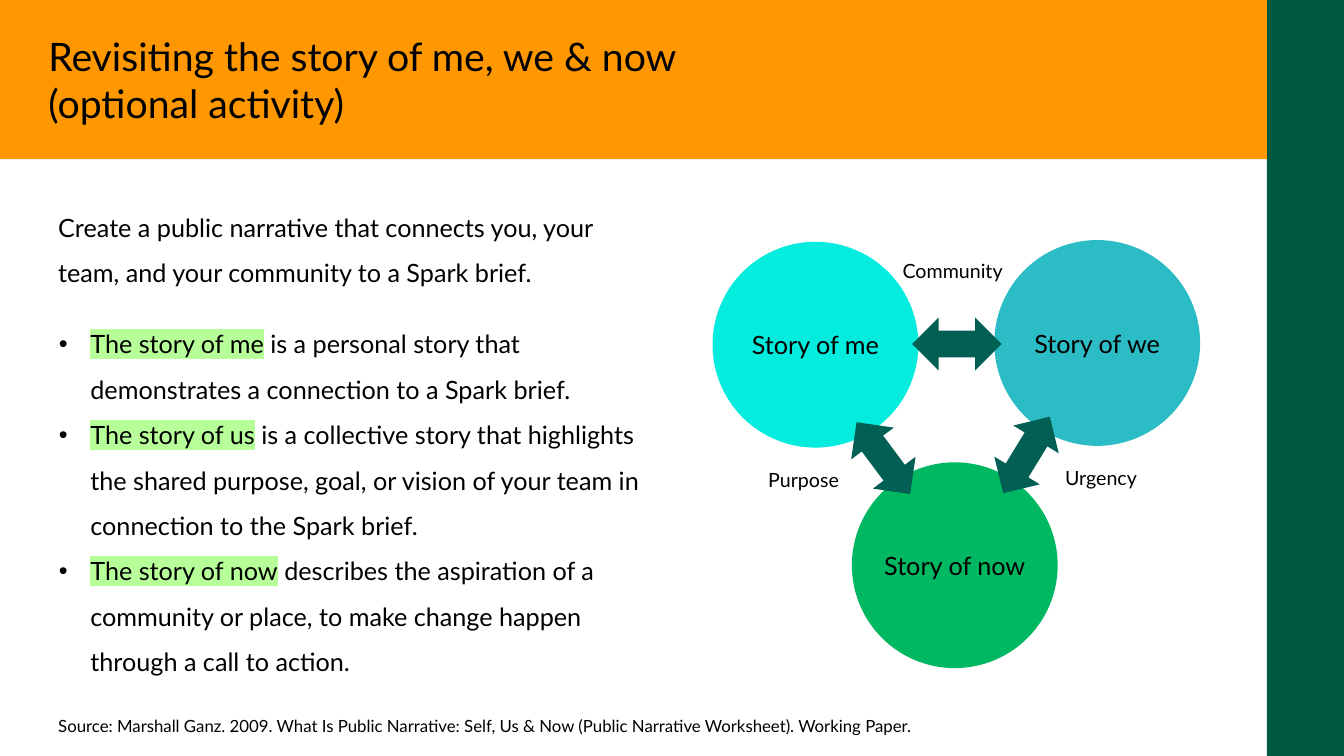
from dataclasses import dataclass

from lxml.etree import SubElement
from pptx import Presentation
from pptx.dml.color import RGBColor
from pptx.enum.shapes import MSO_SHAPE
from pptx.enum.text import MSO_ANCHOR, PP_ALIGN
from pptx.oxml.ns import qn
from pptx.util import Pt


@dataclass
class Theme:
    font: str = "Lato"
    ink: str = "000000"
    band: str = "FF9700"
    bar: str = "005840"
    mark: str = "B6FF99"
    me: str = "03ECDD"
    we: str = "2BBCC5"
    now: str = "00B862"
    arrow: str = "025F54"
    title: int = 28
    body: int = 18
    label: int = 14
    note: int = 12


theme = Theme()
deck = Presentation()
deck.slide_width, deck.slide_height = Pt(960), Pt(540)
slide = deck.slides.add_slide(deck.slide_layouts[6])


def write(frame, paras, size=theme.body, align=PP_ALIGN.LEFT, lead=None,
          bullet=False, wrap=True, anchor=MSO_ANCHOR.TOP):
    """Each paragraph is a list of (words, highlight colour or None)."""
    frame.word_wrap = wrap
    frame.vertical_anchor = anchor
    for i, runs in enumerate(paras):
        para = frame.paragraphs[0] if i == 0 else frame.add_paragraph()
        para.alignment = align
        if lead:
            para.line_spacing = lead
        if bullet:
            props = para._p.get_or_add_pPr()
            props.set("marL", str(Pt(22.5)))
            props.set("indent", str(-Pt(22.5)))
            SubElement(props, qn("a:buFont"), typeface="Arial")
            SubElement(props, qn("a:buChar"), char="•")
        for words, mark in runs:
            run = para.add_run()
            run.text = words
            run.font.size = Pt(size)
            run.font.color.rgb = RGBColor.from_string(theme.ink)
            if mark:
                light = SubElement(run._r.get_or_add_rPr(), qn("a:highlight"))
                SubElement(light, qn("a:srgbClr"), val=mark)
            run.font.name = theme.font


def draw(kind, left, top, width, height, fill, turn=0):
    shape = slide.shapes.add_shape(kind, Pt(left), Pt(top), Pt(width), Pt(height))
    shape.shadow.inherit = False
    shape.fill.solid()
    shape.fill.fore_color.rgb = RGBColor.from_string(fill)
    shape.line.fill.background()
    shape.rotation = turn
    return shape


# Side bar and title band
draw(MSO_SHAPE.RECTANGLE, 905, 0, 55, 540, theme.bar)
draw(MSO_SHAPE.RECTANGLE, 0, 0, 905, 113.75, theme.band)

# Title
head = slide.shapes.add_textbox(Pt(34.5), Pt(23), Pt(816), Pt(68)).text_frame
head.margin_left = head.margin_top = head.margin_right = head.margin_bottom = 0
write(head, [[("Revisiting the story of me, we & now", None)],
             [("(optional activity)", None)]], size=theme.title)

# Intro, bullets and source
intro = "Create a public narrative that connects you, your team, and your community to a Spark brief."
tales = [
    ("The story of me", " is a personal story that demonstrates a connection to a Spark brief."),
    ("The story of us", " is a collective story that highlights the shared purpose, goal, or vision "
                        "of your team in connection to the Spark brief."),
    ("The story of now", " describes the aspiration of a community or place, to make change happen "
                         "through a call to action."),
]
source = ("Source: Marshall Ganz. 2009. What Is Public Narrative: Self, Us & Now "
          "(Public Narrative Worksheet). Working Paper.")
points = [[(name, theme.mark), (rest, None)] for name, rest in tales]
for left, top, width, height, paras, style in [
    (34.5, 137, 440.5, 70, [[(intro, None)]], dict(lead=1.5)),
    (35, 220.5, 440.5, 266, points, dict(lead=1.5, bullet=True)),
    (34.5, 507.5, 790, 22, [[(source, None)]], dict(size=theme.note)),
]:
    box = slide.shapes.add_textbox(Pt(left), Pt(top), Pt(width), Pt(height))
    write(box.text_frame, paras, **style)

# Story circles
for name, left, top, fill in [
    ("Story of me", 509, 172.75, theme.me),
    ("Story of we", 710.25, 171.5, theme.we),
    ("Story of now", 608.5, 330.25, theme.now),
]:
    disc = draw(MSO_SHAPE.OVAL, left, top, 147, 147, fill)
    write(disc.text_frame, [[(name, None)]], align=PP_ALIGN.CENTER,
          wrap=False, anchor=MSO_ANCHOR.MIDDLE)

# Link arrows and their labels
for name, left, top, turn, x, y in [
    ("Purpose", 612, 295.25, 323.3, 488, 330.5),
    ("Urgency", 714.25, 293, 31.4, 700.5, 329),
    ("Community", 664.5, 213.75, 90, 594.5, 181.5),
]:
    draw(MSO_SHAPE.UP_DOWN_ARROW, left, top, 38, 64, theme.arrow, turn)
    box = slide.shapes.add_textbox(Pt(x), Pt(y), Pt(172), Pt(24))
    write(box.text_frame, [[(name, None)]], size=theme.label, align=PP_ALIGN.CENTER)

deck.save("out.pptx")
